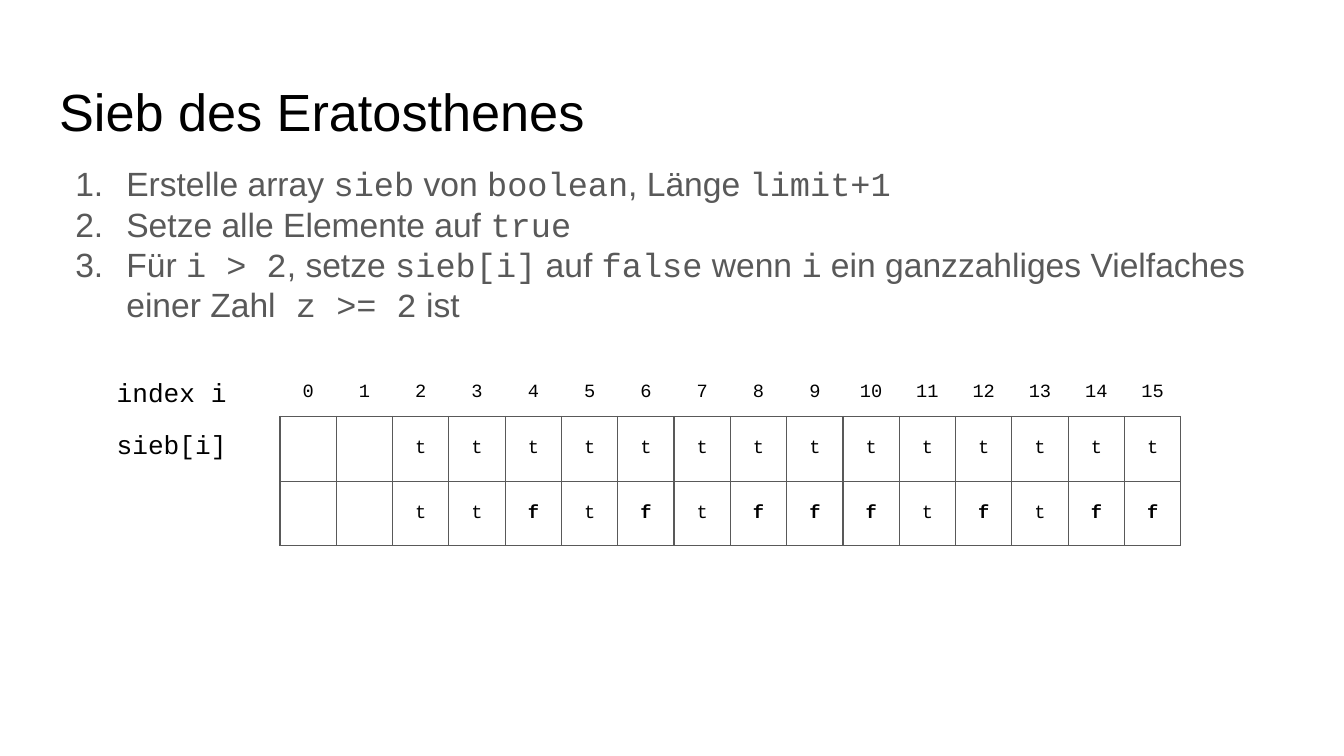
import lxml.etree
import pptx
import pptx.dml.color
import pptx.enum.text
import pptx.oxml.ns
import pptx.util

theme = {
    "sans": "Arial", "mono": "Courier New",
    "black": "000000", "grey": "595959",
    "title": 28, "list": 18, "label": 14, "cell": 10,
}
anchor = pptx.enum.text.MSO_ANCHOR
align = pptx.enum.text.PP_ALIGN
qn = pptx.oxml.ns.qn


def style(run, face, size, tone, bold=False):
    run.font.name = theme[face]
    run.font.size = pptx.util.Pt(theme[size])
    run.font.color.rgb = pptx.dml.color.RGBColor.from_string(theme[tone])
    run.font.bold = bold


def place(shape, left, top, width, height):
    shape.left, shape.top = int(across * left), int(down * top)
    shape.width, shape.height = int(across * width), int(down * height)
    frame = shape.text_frame
    frame.word_wrap = True
    frame.auto_size = pptx.enum.text.MSO_AUTO_SIZE.NONE
    frame.vertical_anchor = anchor.TOP
    frame.margin_left = frame.margin_right = inset
    frame.margin_top = frame.margin_bottom = inset
    return frame


deck = pptx.Presentation()
wide = pptx.util.Inches(10)
high = wide * 9 // 16
deck.slide_width, deck.slide_height = wide, high
across, down = wide / 100, high / 100
inset = pptx.util.Inches(0.1)
slide = deck.slides.add_slide(deck.slide_layouts[1])
head, body = slide.placeholders

frame = place(head, 3.4, 8.7, 93.2, 11.2)
frame.text = "Sieb des Eratosthenes"
para = frame.paragraphs[0]
para.alignment = align.LEFT
para.line_spacing = 1.0
style(para.runs[0], "sans", "title", "black")

steps = [
    "Erstelle array |sieb| von |boolean|, Länge |limit+1",
    "Setze alle Elemente auf |true",
    "Für |i > 2|, setze |sieb[i]| auf |false| wenn |i"
    "| ein ganzzahliges Vielfaches einer Zahl| z >= 2| ist",
]
frame = place(body, 3.4, 19.8, 93.2, 22.8)
for row, step in enumerate(steps):
    para = frame.add_paragraph() if row else frame.paragraphs[0]
    para.space_before = para.space_after = pptx.util.Pt(0)
    para.line_spacing = 1.0
    for part, text in enumerate(step.split("|")):
        run = para.add_run()
        run.text = text
        style(run, "mono" if part % 2 else "sans", "list", "grey")
    props = para._p.get_or_add_pPr()
    props.set("marL", str(pptx.util.Inches(0.5)))
    props.set("indent", str(pptx.util.Inches(-0.38)))
    lxml.etree.SubElement(props, qn("a:buFont"), typeface=theme["sans"])
    lxml.etree.SubElement(props, qn("a:buAutoNum"), type="arabicPeriod")

count = 16
primes = [n for n in range(2, count) if all(n % z for z in range(2, n))]
rows = [
    [str(n) for n in range(count)],
    ["", ""] + ["t"] * (count - 2),
    ["", ""] + ["t" if n in primes else "f" for n in range(2, count)],
]
tall = [6.4, 8.55, 8.55]
pitch = 4.19
grid = slide.shapes.add_table(
    len(rows), count, int(across * 20.83), int(down * 48.7),
    int(across * pitch * count), int(down * sum(tall))).table
grid.first_row = grid.horz_banding = False
for col in grid.columns:
    col.width = int(across * pitch)
for row, texts in enumerate(rows):
    grid.rows[row].height = int(down * tall[row])
    for col, text in enumerate(texts):
        cell = grid.cell(row, col)
        cell.fill.background()
        props = cell._tc.get_or_add_tcPr()
        for spot, side in enumerate("LRTB"):
            line = lxml.etree.Element(qn("a:ln" + side), w=str(pptx.util.Pt(0.75)))
            if row or side == "B":
                fill = lxml.etree.SubElement(line, qn("a:solidFill"))
                lxml.etree.SubElement(fill, qn("a:srgbClr"), val=theme["grey"])
            else:
                lxml.etree.SubElement(line, qn("a:noFill"))
            props.insert(spot, line)
        if text:
            cell.vertical_anchor = anchor.MIDDLE
            cell.margin_left = cell.margin_right = inset
            cell.margin_top = cell.margin_bottom = inset
            cell.text_frame.text = text
            para = cell.text_frame.paragraphs[0]
            para.alignment = align.CENTER
            style(para.runs[0], "mono", "cell", "black", text == "f")

for row, text in enumerate(["index i", "sieb[i]"]):
    box = slide.shapes.add_textbox(0, 0, 0, 0)
    frame = place(box, 7.7, 48 + row * 6.95, 10.7, 7.8)
    frame.text = text
    style(frame.paragraphs[0].runs[0], "mono", "label", "black")

deck.save("out.pptx")
